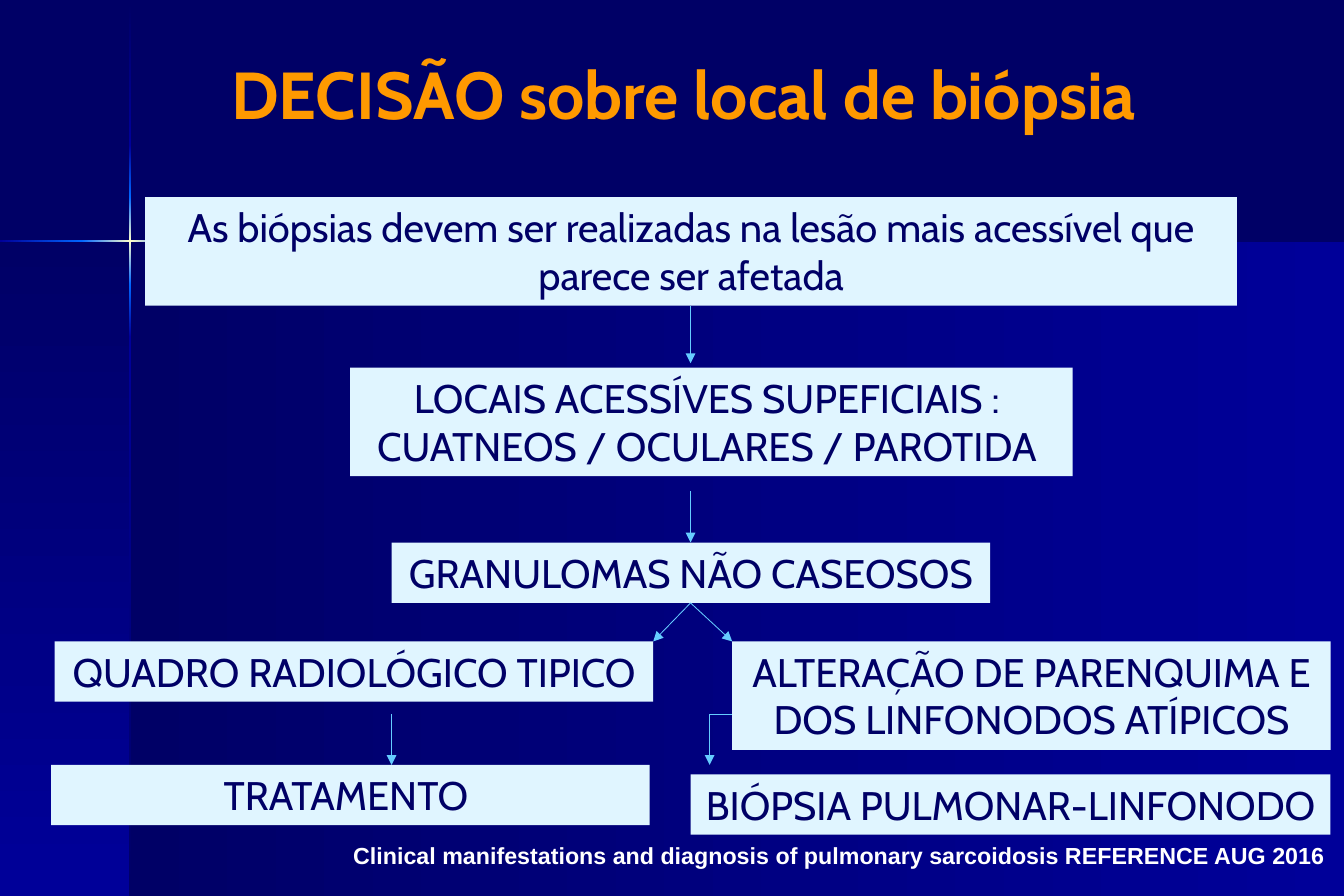
import pptx
import pptx.util
import pptx.oxml
import pptx.oxml.ns
import pptx.dml.color
import pptx.enum.shapes
import pptx.enum.text
import lxml.etree

Pt = pptx.util.Pt
ALIGN = pptx.enum.text.PP_ALIGN
ANCHOR = pptx.enum.text.MSO_ANCHOR

# Content
COLORS = {
    "navy": "000066", "blue": "000099", "bright": "0066FF", "glow": "FFFFCC",
    "box": "E0F5FF", "arrow": "66CCFF", "title": "FF9900", "white": "FFFFFF",
}
TITLE = "DECISÃO sobre local de biópsia "
SOURCE = ("Clinical manifestations and diagnosis of pulmonary sarcoidosis "
          "REFERENCE AUG 2016 ")

# Flow boxes: left, top, width, number of text lines, paragraphs
BOXES = [
    (87.5, 118.8, 658, 2, ["As biópsias devem ser realizadas na lesão mais "
                           "acessível que parece ser afetada"]),
    (211, 221.6, 435.5, 2, ["LOCAIS ACESSÍVES SUPEFICIAIS : ",
                            "CUATNEOS / OCULARES / PAROTIDA "]),
    (236, 327, 360.7, 1, ["GRANULOMAS NÃO CASEOSOS"]),
    (441.3, 386.6, 360.7, 2, ["ALTERAÇÃO DE PARENQUIMA E DOS LINFONODOS ATÍPICOS"]),
    (33, 386.6, 360.7, 1, ["QUADRO RADIOLÓGICO TIPICO"]),
    (30.8, 461, 360.7, 1, ["TRATAMENTO "]),
    (416.3, 466.7, 385.5, 1, ["BIÓPSIA PULMONAR-LINFONODO "]),
]
BOX_HEIGHT = {1: 36.4, 2: 65.4}

# Connectors: start, end, has arrowhead
CONNECTORS = [
    ((416.2, 184.3), (416.2, 218.9), True),
    ((416.2, 295.9), (416.2, 326.9), True),
    ((236, 430.3), (236, 461), True),
    ((427.7, 430.3), (427.7, 461), True),
    ((416.2, 363.4), (393.7, 386.6), True),
    ((416.2, 363.4), (441.3, 386.6), True),
    ((427.7, 430.3), (441.3, 430.3), False),
]

# Backdrop: two panels, then streaks as (start, end, colours)
CROSS_X, CROSS_Y, STREAK = 78.5, 145.4, 1.4
SLIDE_WIDTH, SLIDE_HEIGHT = 810, 540
PANELS = [(CROSS_X, SLIDE_WIDTH - CROSS_X, 0), (0, CROSS_X, 90)]
VERTICAL_STREAKS = [
    (0.7, 87.1, ["navy", "blue"]),
    (203, 540, ["blue", "navy"]),
    (171.4, 203, ["bright", "blue"]),
    (87.1, 118.8, ["blue", "bright"]),
    (118.8, 171.4, ["bright", "glow", "bright"]),
]
HORIZONTAL_STREAKS = [
    (143.3, 810, ["blue", "navy"]),
    (0, 49.5, ["blue", "bright"]),
    (49.2, 108, ["bright", "glow", "bright"]),
]

presentation = pptx.Presentation()
presentation.slide_width = Pt(SLIDE_WIDTH)
presentation.slide_height = Pt(SLIDE_HEIGHT)
slide = presentation.slides.add_slide(presentation.slide_layouts[6])


def color(name):
    return pptx.dml.color.RGBColor.from_string(COLORS[name])


def set_attributes(target, values):
    for name, value in values.items():
        setattr(target, name, value)


def add_rectangle(left, top, width, height):
    shape = slide.shapes.add_shape(pptx.enum.shapes.MSO_SHAPE.RECTANGLE,
                                   Pt(left), Pt(top), Pt(width), Pt(height))
    shape.shadow.inherit = False
    shape.line.fill.background()
    return shape


def add_gradient(left, top, width, height, names, angle):
    shape = add_rectangle(left, top, width, height)
    shape.fill.background()
    stops = "".join(
        f'<a:gs pos="{index * 100000 // (len(names) - 1)}">'
        f'<a:srgbClr val="{COLORS[name]}"/></a:gs>'
        for index, name in enumerate(names))
    gradient = pptx.oxml.parse_xml(
        f'<a:gradFill {pptx.oxml.ns.nsdecls("a")} rotWithShape="1">'
        f'<a:gsLst>{stops}</a:gsLst><a:lin ang="{angle * 60000}" scaled="0"/></a:gradFill>')
    properties = shape._element.spPr
    properties.replace(properties.find(pptx.oxml.ns.qn("a:noFill")), gradient)


def write_text(shape, paragraphs, anchor, alignment, font, color_name):
    frame = shape.text_frame
    set_attributes(frame, {"word_wrap": True, "vertical_anchor": anchor,
                           "text": "\n".join(paragraphs)})
    for paragraph in frame.paragraphs:
        paragraph.alignment = alignment
        for run in paragraph.runs:
            set_attributes(run.font, font)
            run.font.color.rgb = color(color_name)


def add_text(left, top, width, height, *text_format):
    shape = slide.shapes.add_textbox(Pt(left), Pt(top), Pt(width), Pt(height))
    write_text(shape, *text_format)


# Background
slide.background.fill.solid()
slide.background.fill.fore_color.rgb = color("navy")
for left, width, angle in PANELS:
    add_gradient(left, CROSS_Y, width, SLIDE_HEIGHT - CROSS_Y, ["navy", "blue"], angle)
for start, end, names in VERTICAL_STREAKS:
    add_gradient(CROSS_X - STREAK / 2, start, STREAK, end - start, names, 90)
for start, end, names in HORIZONTAL_STREAKS:
    add_gradient(start, CROSS_Y - STREAK / 2, end - start, STREAK, names, 0)

# Title and source
add_text(31, 23.8, 771, 64.8, [TITLE], ANCHOR.MIDDLE, ALIGN.CENTER,
         {"name": "Cabin", "size": Pt(40), "bold": True}, "title")
add_text(0, 503.3, SLIDE_WIDTH, 36.7, [SOURCE], ANCHOR.TOP, ALIGN.RIGHT,
         {"name": "Arial", "size": Pt(14), "bold": True}, "white")

# Flow boxes
for left, top, width, lines, paragraphs in BOXES:
    box = add_rectangle(left, top, width, BOX_HEIGHT[lines])
    box.fill.solid()
    box.fill.fore_color.rgb = color("box")
    write_text(box, paragraphs, ANCHOR.TOP, ALIGN.CENTER,
               {"name": "Cabin", "size": Pt(24)}, "navy")

# Connectors
for start, end, has_arrowhead in CONNECTORS:
    connector = slide.shapes.add_connector(
        pptx.enum.shapes.MSO_CONNECTOR.STRAIGHT, *map(Pt, start + end))
    connector.line.width = Pt(0.5)
    connector.line.color.rgb = color("arrow")
    if has_arrowhead:
        lxml.etree.SubElement(connector.line._get_or_add_ln(),
                              pptx.oxml.ns.qn("a:tailEnd"), type="triangle")
    lxml.etree.SubElement(connector._element.spPr, pptx.oxml.ns.qn("a:effectLst"))

presentation.save("out.pptx")
